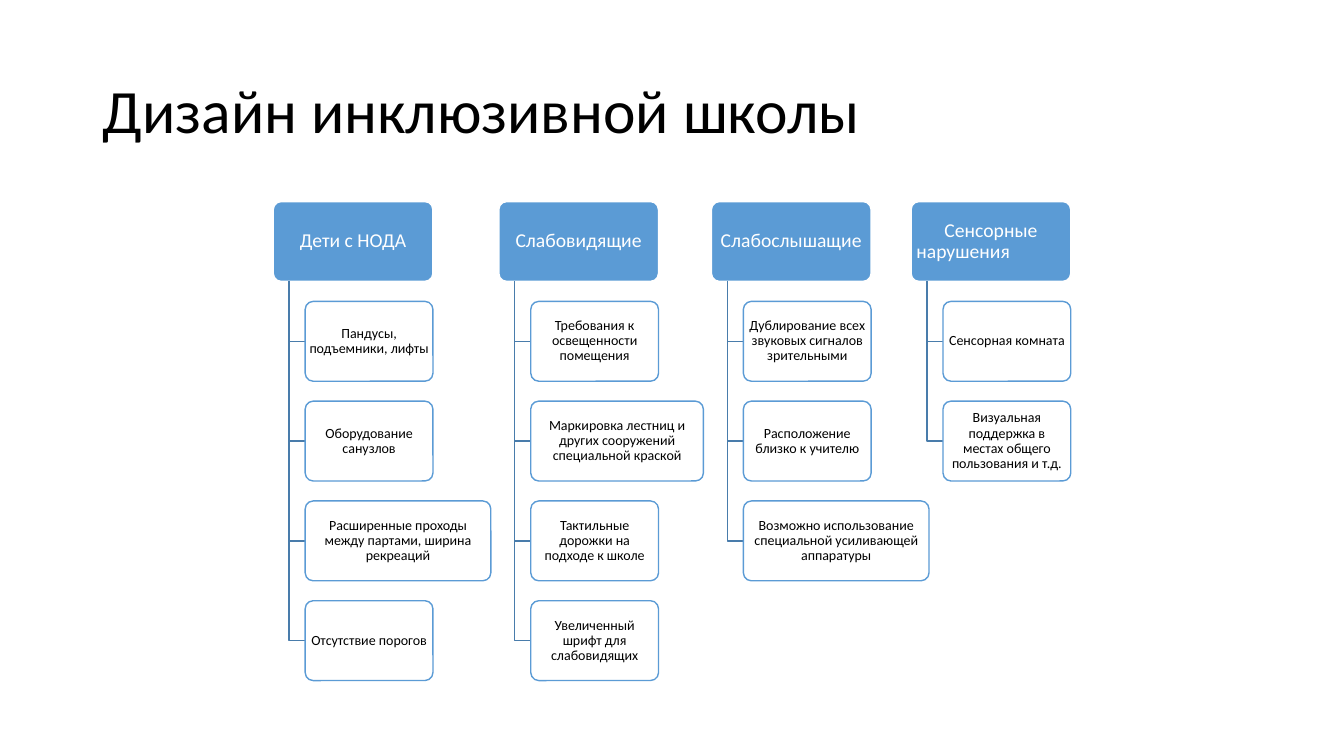
from dataclasses import dataclass

from pptx import Presentation
from pptx.dml.color import RGBColor
from pptx.enum.shapes import MSO_SHAPE
from pptx.enum.text import MSO_ANCHOR, PP_ALIGN
from pptx.util import Inches, Pt

ROUNDED = MSO_SHAPE.ROUNDED_RECTANGLE
MIDDLE = MSO_ANCHOR.MIDDLE
CENTER, LEFT = PP_ALIGN.CENTER, PP_ALIGN.LEFT

BLUE = RGBColor(0x5B, 0x9B, 0xD5)
BRANCH_BLUE = RGBColor(0x49, 0x7C, 0xAB)
WHITE = RGBColor(0xFF, 0xFF, 0xFF)
BLACK = RGBColor(0x00, 0x00, 0x00)
FONT = "Calibri"

UNIT = 0.99
CHART_LEFT, CHART_TOP = 2.71, 2.0
BOX_HEIGHT = 0.8
HEADER_WIDTH = 1.6
TRUNK_OFFSET = HEADER_WIDTH * 0.1
NEED_OFFSET = HEADER_WIDTH * 0.2
NEED_WIDTH = HEADER_WIDTH * 0.8


@dataclass(frozen=True)
class BoxStyle:
    fill: RGBColor
    line: RGBColor
    font_color: RGBColor
    font_size: int
    side_inset: float
    end_inset: float


@dataclass(frozen=True)
class Need:
    text: str
    width: float = NEED_WIDTH


@dataclass(frozen=True)
class Group:
    column: float
    title: list[tuple[str, PP_ALIGN]]
    needs: list[Need]


HEADER_STYLE = BoxStyle(BLUE, WHITE, WHITE, 14, 0.03, 0.02)
NEED_STYLE = BoxStyle(WHITE, BLUE, BLACK, 10, 0.02, 0.01)

GROUPS = [
    Group(0, [("Дети с НОДА", CENTER)], [
        Need("Пандусы, подъемники, лифты"),
        Need("Оборудование санузлов"),
        Need("Расширенные проходы между партами, ширина рекреаций", 1.86),
        Need("Отсутствие порогов"),
    ]),
    Group(2.26, [("Слабовидящие", CENTER)], [
        Need("Требования к освещенности помещения"),
        Need("Маркировка лестниц и других сооружений специальной краской", 1.73),
        Need("Тактильные дорожки на подходе к школе"),
        Need("Увеличенный шрифт для слабовидящих"),
    ]),
    Group(4.39, [("Слабослышащие", CENTER)], [
        Need("Дублирование всех звуковых сигналов зрительными"),
        Need("Расположение близко к учителю"),
        Need("Возможно использование специальной усиливающей аппаратуры", 1.86),
    ]),
    Group(6.39, [("Сенсорные", CENTER), ("нарушения", LEFT)], [
        Need("Сенсорная комната"),
        Need("Визуальная поддержка в местах общего пользования и т.д."),
    ]),
]


def grid_x(column: float) -> int:
    return Inches(CHART_LEFT + column * UNIT)


def grid_y(row: float) -> int:
    return Inches(CHART_TOP + row * UNIT)


def write_lines(frame, lines: list[tuple[str, PP_ALIGN]], size: int, color: RGBColor) -> None:
    frame.word_wrap = True
    frame.vertical_anchor = MIDDLE
    for index, (text, alignment) in enumerate(lines):
        paragraph = frame.add_paragraph() if index else frame.paragraphs[0]
        paragraph.text = text
        paragraph.alignment = alignment
        paragraph.line_spacing = 0.9
        paragraph.font.name = FONT
        paragraph.font.size = Pt(size)
        paragraph.font.color.rgb = color


def draw_title(slide, text: str) -> None:
    title = slide.shapes.add_textbox(Inches(0.92), Inches(0.4), Inches(11.5), Inches(1.45))
    write_lines(title.text_frame, [(text, LEFT)], 44, BLACK)


def draw_box(slide, column: float, row: int, width: float,
             lines: list[tuple[str, PP_ALIGN]], style: BoxStyle) -> None:
    box = slide.shapes.add_shape(ROUNDED, grid_x(column), grid_y(row),
                                 Inches(width * UNIT), Inches(BOX_HEIGHT * UNIT))
    box.adjustments[0] = 0.1
    box.shadow.inherit = False
    box.fill.solid()
    box.fill.fore_color.rgb = style.fill
    box.line.color.rgb = style.line
    box.line.width = Pt(1)
    frame = box.text_frame
    frame.margin_left = frame.margin_right = Inches(style.side_inset)
    frame.margin_top = frame.margin_bottom = Inches(style.end_inset)
    write_lines(frame, lines, style.font_size, style.font_color)


def draw_branch(slide, column: float, row: int) -> None:
    trunk_x = grid_x(column + TRUNK_OFFSET)
    need_middle = grid_y(row + BOX_HEIGHT / 2)
    outline = slide.shapes.build_freeform(trunk_x, grid_y(BOX_HEIGHT))
    outline.add_line_segments(
        [(trunk_x, need_middle), (grid_x(column + NEED_OFFSET), need_middle)], close=False)
    branch = outline.convert_to_shape()
    branch.shadow.inherit = False
    branch.fill.background()
    branch.line.color.rgb = BRANCH_BLUE
    branch.line.width = Pt(1)


def draw_group(slide, group: Group) -> None:
    draw_box(slide, group.column, 0, HEADER_WIDTH, group.title, HEADER_STYLE)
    for row, need in enumerate(group.needs, start=1):
        draw_branch(slide, group.column, row)
        draw_box(slide, group.column + NEED_OFFSET, row, need.width,
                 [(need.text, CENTER)], NEED_STYLE)


def main() -> None:
    presentation = Presentation()
    presentation.slide_width = Inches(13.33)
    presentation.slide_height = Inches(7.5)
    slide = presentation.slides.add_slide(presentation.slide_layouts[6])
    draw_title(slide, "Дизайн инклюзивной школы")
    for group in GROUPS:
        draw_group(slide, group)
    presentation.save("out.pptx")


if __name__ == "__main__":
    main()
